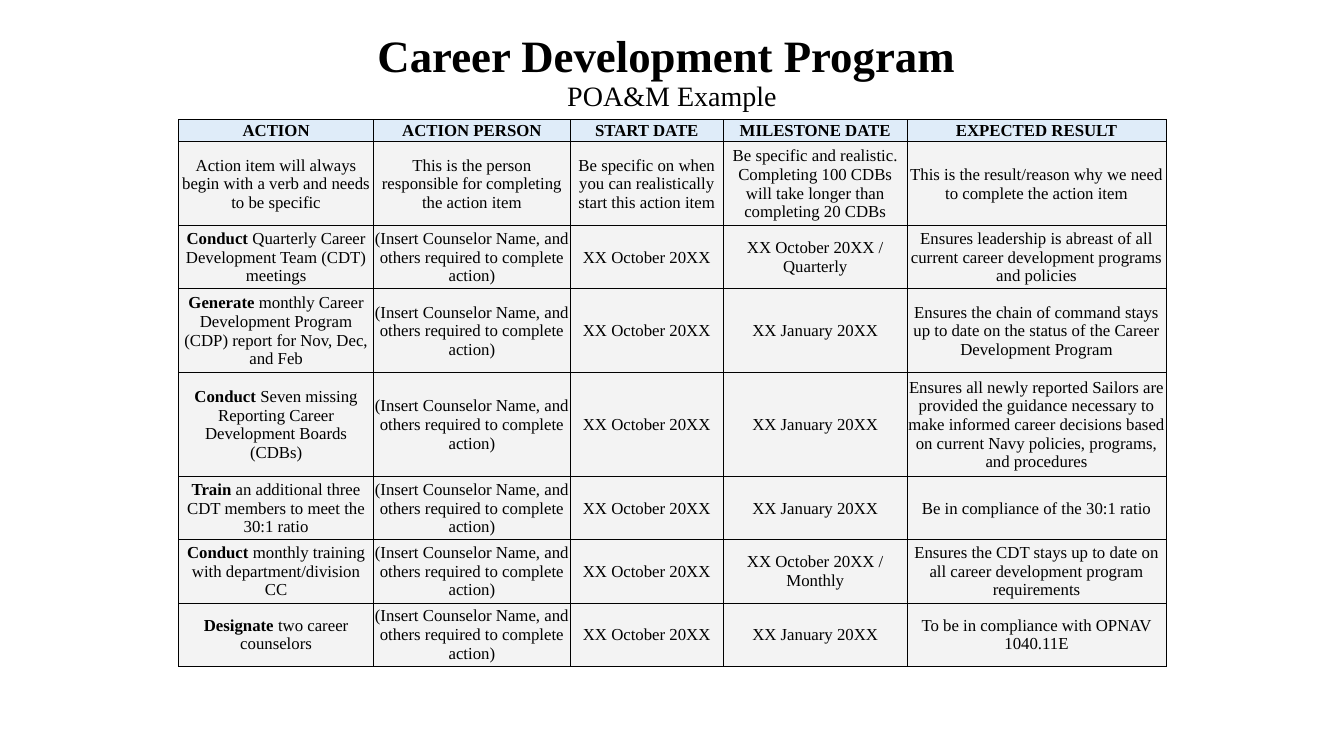
from dataclasses import dataclass

from lxml import etree
from pptx import Presentation
from pptx.dml.color import RGBColor
from pptx.enum.text import MSO_ANCHOR, PP_ALIGN
from pptx.oxml.ns import qn
from pptx.util import Pt

CENTER = PP_ALIGN.CENTER
MIDDLE = MSO_ANCHOR.MIDDLE


@dataclass(frozen=True)
class Theme:
    font: str = "Times New Roman"
    ink: str = "000000"
    header_fill: str = "DAE9F8"
    body_fill: str = "F2F2F2"
    fill_opacity: int = 85
    border_width: float = 0.5
    cell_margin: float = 0.7
    title_size: int = 32
    subtitle_size: int = 20
    table_size: int = 12


def add_run(paragraph, text, *, font, size, color, bold=False):
    run = paragraph.add_run()
    run.text = text
    run.font.name = font
    run.font.size = Pt(size)
    run.font.bold = bold
    run.font.color.rgb = RGBColor.from_string(color)


class SlideBuilder:
    def __init__(self, slide, theme):
        self.slide = slide
        self.theme = theme

    def words(self, paragraph, text, size, bold=False):
        add_run(paragraph, text, font=self.theme.font, size=size,
                color=self.theme.ink, bold=bold)

    def heading(self, title, subtitle, left, top, width, height):
        box = self.slide.shapes.add_textbox(Pt(left), Pt(top), Pt(width), Pt(height))
        frame = box.text_frame
        frame.word_wrap = True
        frame.vertical_anchor = MIDDLE
        paragraph = frame.paragraphs[0]
        paragraph.alignment = CENTER
        paragraph.line_spacing = 0.9
        self.words(paragraph, title, self.theme.title_size, bold=True)
        paragraph.add_line_break()
        self.words(paragraph, subtitle, self.theme.subtitle_size)

    def table(self, header, rows, left, top, widths, heights):
        frame = self.slide.shapes.add_table(
            len(rows) + 1, len(header), Pt(left), Pt(top),
            Pt(sum(widths)), Pt(sum(heights)))
        grid = frame.table
        grid.first_row = grid.horz_banding = False
        for column, width in zip(grid.columns, widths):
            column.width = Pt(width)
        for row, height in zip(grid.rows, heights):
            row.height = Pt(height)

        for column, label in enumerate(header):
            self.cell(grid.cell(0, column), self.theme.header_fill, lead=label)
        for line, (lead, *texts) in enumerate(rows, start=1):
            for column, text in enumerate(texts):
                self.cell(grid.cell(line, column), self.theme.body_fill,
                          lead="" if column else lead, text=text)

    def cell(self, cell, fill, lead="", text=""):
        cell.vertical_anchor = MIDDLE
        cell.margin_left = cell.margin_right = cell.margin_top = Pt(self.theme.cell_margin)
        cell.margin_bottom = 0
        paragraph = cell.text_frame.paragraphs[0]
        paragraph.alignment = CENTER
        if lead:
            self.words(paragraph, lead, self.theme.table_size, bold=True)
        if text:
            self.words(paragraph, text, self.theme.table_size)

        # Borders come before the fill in the cell properties
        properties = cell._tc.get_or_add_tcPr()
        for side in ("a:lnL", "a:lnR", "a:lnT", "a:lnB"):
            border = etree.SubElement(properties, qn(side),
                                      w=str(Pt(self.theme.border_width)))
            line_fill = etree.SubElement(border, qn("a:solidFill"))
            etree.SubElement(line_fill, qn("a:srgbClr"), val=self.theme.ink)
        cell.fill.solid()
        cell.fill.fore_color.rgb = RGBColor.from_string(fill)
        color = properties.find(qn("a:solidFill")).find(qn("a:srgbClr"))
        etree.SubElement(color, qn("a:alpha"), val=str(self.theme.fill_opacity * 1000))


COUNSELOR = "(Insert Counselor Name, and others required to complete action)"
START = "XX October 20XX"
JANUARY = "XX January 20XX"

HEADER = ["ACTION", "ACTION PERSON", "START DATE", "MILESTONE DATE", "EXPECTED RESULT"]

# Bold verb, rest of the action, milestone date, expected result
ACTIONS = [
    ("Conduct", " Quarterly Career Development Team (CDT) meetings",
     START + " / Quarterly",
     "Ensures leadership is abreast of all current career development programs "
     "and policies"),
    ("Generate", " monthly Career Development Program (CDP) report for Nov, Dec, and Feb",
     JANUARY,
     "Ensures the chain of command stays up to date on the status of the Career "
     "Development Program"),
    ("Conduct", " Seven missing Reporting Career Development Boards (CDBs)",
     JANUARY,
     "Ensures all newly reported Sailors are provided the guidance necessary to make "
     "informed career decisions based on current Navy policies, programs, and procedures"),
    ("Train", " an additional three CDT members to meet the 30:1 ratio",
     JANUARY, "Be in compliance of the 30:1 ratio"),
    ("Conduct", " monthly training with department/division CC",
     START + " / Monthly",
     "Ensures the CDT stays up to date on all career development program requirements"),
    ("Designate", " two career counselors",
     JANUARY, "To be in compliance with OPNAV 1040.11E"),
]

GUIDANCE = (
    "",
    "Action item will always begin with a verb and needs to be specific",
    "This is the person responsible for completing the action item",
    "Be specific on when you can realistically start this action item",
    "Be specific and realistic. Completing 100 CDBs will take longer than "
    "completing 20 CDBs",
    "This is the result/reason why we need to complete the action item",
)

COLUMN_WIDTHS = [139.5, 140.2, 109.7, 131, 185.2]
ROW_HEIGHTS = [15.8, 59.8, 45.2, 59.8, 74.2, 45.2, 45.2, 45.2]


def main():
    presentation = Presentation()
    presentation.slide_width = Pt(960)
    presentation.slide_height = Pt(540)
    slide = presentation.slides.add_slide(presentation.slide_layouts[6])
    builder = SlideBuilder(slide, Theme())

    # Plan of action and milestones
    rows = [GUIDANCE] + [(verb, action, COUNSELOR, START, milestone, result)
                         for verb, action, milestone, result in ACTIONS]
    builder.table(HEADER, rows, 127.5, 85.5, COLUMN_WIDTHS, ROW_HEIGHTS)

    # Title and subtitle
    builder.heading("Career Development Program ", "POA&M Example", 0, 0, 960, 104.4)

    presentation.save("out.pptx")


if __name__ == "__main__":
    main()
